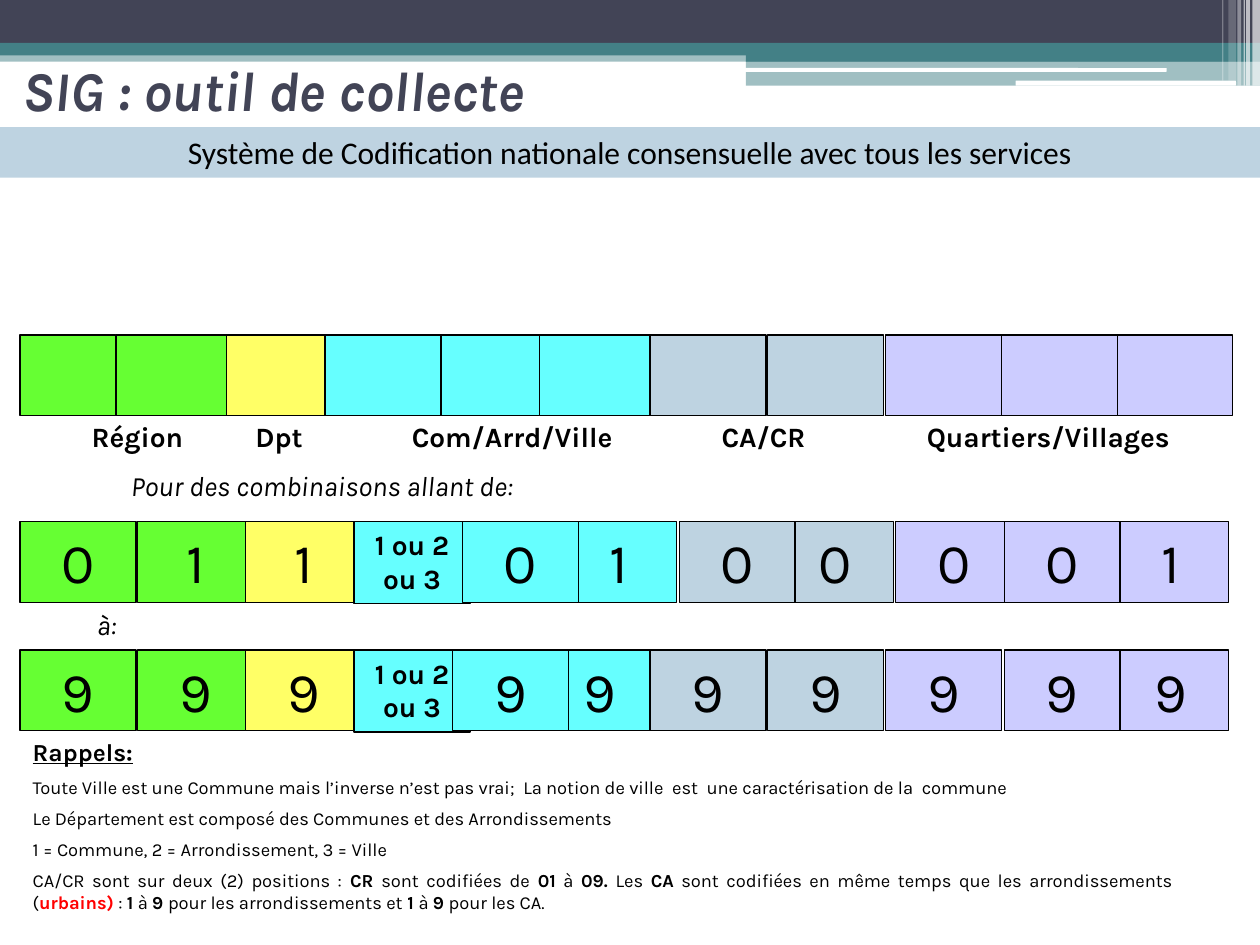
from dataclasses import dataclass

from pptx import Presentation
from pptx.dml.color import RGBColor
from pptx.enum.shapes import MSO_SHAPE as Shape
from pptx.enum.text import MSO_ANCHOR as Anchor, MSO_AUTO_SIZE as AutoSize, PP_ALIGN as Align
from pptx.oxml.xmlchemy import OxmlElement
from pptx.util import Inches, Pt


@dataclass(frozen=True)
class Theme:
    font: str = "Karla"
    banner_font: str = "Calibri"
    black: str = "000000"
    white: str = "FFFFFF"
    red: str = "FF0000"
    navy: str = "424456"
    teal: str = "438086"
    green: str = "66FF33"
    yellow: str = "FFFF66"
    cyan: str = "66FFFF"
    blue_grey: str = "BED3E1"
    lilac: str = "CCCCFF"
    title_size: float = 32
    banner_size: float = 18
    label_size: float = 16
    heading_size: float = 14
    note_size: float = 10.5


theme = Theme()


def add_text(paragraph, text, size=theme.label_size, color=theme.black, font=theme.font,
             align=Align.CENTER, bold=False, italic=False, underline=False):
    paragraph.alignment = align
    run = paragraph.add_run()
    run.text = text
    run.font.name = font
    run.font.size = Pt(size)
    run.font.color.rgb = RGBColor.from_string(color)
    run.font.bold, run.font.italic, run.font.underline = bold, italic, underline


def add_box(left, top, width, height, fill, opacity=100, outlined=False, kind=Shape.RECTANGLE):
    shape = slide.shapes.add_shape(kind, Inches(left), Inches(top), Inches(width), Inches(height))
    shape.shadow.inherit = False
    shape.fill.solid()
    shape.fill.fore_color.rgb = RGBColor.from_string(fill)
    if opacity < 100:
        alpha = OxmlElement("a:alpha")
        alpha.set("val", str(opacity * 1000))
        shape.fill._xPr.find(".//{*}srgbClr").append(alpha)
    if outlined:
        shape.line.color.rgb = RGBColor.from_string(theme.black)
        shape.line.width = Pt(0.75)
    else:
        shape.line.fill.background()
    shape.text_frame.word_wrap = True
    shape.text_frame.vertical_anchor = Anchor.TOP
    return shape


presentation = Presentation()
presentation.slide_width, presentation.slide_height = Inches(10), Inches(7.5)
slide = presentation.slides.add_slide(presentation.slide_layouts[1])

# Header bands
for left, top, width, height, fill, opacity in [
    (0, 0.4, 10, 0.09, theme.teal, 50),
    (0, 0, 10, 0.34, theme.navy, 100),
    (0, 0.34, 10, 0.1, theme.teal, 100),
    (5.92, 0.39, 4.08, 0.1, theme.teal, 100),
    (5.92, 0.48, 4.08, 0.2, theme.teal, 50),
]:
    add_box(left, top, width, height, fill, opacity)

# White rules and vertical stripes on the header
for left, top, width, height in [(5.91, 0.54, 3.35, 0.03), (8.06, 0.64, 1.75, 0.04)]:
    add_box(left, top, width, height, theme.white, kind=Shape.ROUNDED_RECTANGLE)
for left, width, height, opacity in [
    (9.94, 0.06, 0.68, 65), (9.89, 0.03, 0.68, 65), (9.87, 0.01, 0.68, 60),
    (9.82, 0.03, 0.68, 40), (9.75, 0.06, 0.64, 20), (9.7, 0.01, 0.64, 30),
]:
    add_box(left, 0, width, height, theme.white, opacity)

# Title and subtitle banner
title = slide.shapes.title
title.left, title.top, title.width, title.height = Inches(0.08), Inches(0.39), Inches(8.59), Inches(0.64)
title.text_frame.auto_size = AutoSize.NONE
title.text_frame.vertical_anchor = Anchor.TOP
add_text(title.text_frame.paragraphs[0], "SIG : outil de collecte", size=theme.title_size,
         color=theme.navy, align=Align.LEFT, bold=True, italic=True)
banner = add_box(0, 1.01, 10, 0.4, theme.blue_grey)
add_text(banner.text_frame.paragraphs[0],
         "Système de Codification nationale consensuelle avec tous les services",
         size=theme.banner_size, font=theme.banner_font)

# Code rows: neighbouring cells overlap, so the front column is drawn last
cell_width, cell_height = 0.92, 0.64
column_fills = ([theme.green] * 2 + [theme.yellow] + [theme.cyan] * 3
                + [theme.blue_grey] * 2 + [theme.lilac] * 3)
draw_order = [0, 1, 2, 3, 4, 5, 7, 6, 8, 10, 9]
kind_code = "1 ou 2 ou 3"
code_rows = [
    (2.66, 3, [0.16, 0.92, 1.8, 2.58, 3.36, 4.28, 5.16, 6.09, 7.03, 7.95, 8.86], [""] * 11),
    (4.14, 4, [0.16, 1.09, 1.95, 2.81, 3.67, 4.45, 5.39, 6.17, 7.11, 7.97, 8.83],
     ["0", "1", "1", kind_code, "0", "1", "0", "0", "0", "0", "1"]),
    (5.16, 4, [0.16, 1.09, 1.95, 2.81, 3.59, 4.3, 5.16, 6.09, 7.03, 7.97, 8.83],
     ["9", "9", "9", kind_code] + ["9"] * 7),
]
for top, front, lefts, codes in code_rows:
    for column in sorted(draw_order, key=lambda index: index == front):
        code = codes[column]
        width = min(cell_width, lefts[1] - lefts[0]) if column == 0 else cell_width
        height = 0.65 if code == kind_code else cell_height
        cell = add_box(lefts[column], top, width, height, column_fills[column], outlined=True)
        if code:
            is_kind = code == kind_code
            add_text(cell.text_frame.paragraphs[0], code, bold=is_kind,
                     size=theme.label_size if is_kind else theme.title_size)

# Column labels and range captions
for left, top, width, text, is_label in [
    (0.55, 3.28, 1.08, "Région", True),
    (1.8, 3.28, 0.83, "Dpt", True),
    (3.05, 3.28, 2.03, "Com/Arrd/Ville", True),
    (5.56, 3.28, 1, "CA/CR", True),
    (7.11, 3.28, 2.42, "Quartiers/Villages", True),
    (0.55, 3.67, 4.01, "Pour des combinaisons allant de:", False),
    (0.55, 4.77, 0.59, "à:", False),
]:
    label = slide.shapes.add_textbox(Inches(left), Inches(top), Inches(width), Inches(0.37))
    label.text_frame.word_wrap = True
    add_text(label.text_frame.paragraphs[0], text, bold=is_label, italic=not is_label)

# Reminders: text between asterisks is bold
reminders = [
    "*Rappels:*",
    "Toute Ville est une Commune mais l’inverse n’est pas vrai;  La notion de ville  est  une "
    "caractérisation de la  commune",
    "Le Département est composé des Communes et des Arrondissements",
    "1 = Commune, 2 = Arrondissement, 3 = Ville",
    "CA/CR sont sur deux (2) positions : *CR *sont codifiées de *01* à *09. *Les *CA* sont codifiées "
    "en même temps que les arrondissements (*urbains)* : *1* à *9 *pour les arrondissements et"
    "* 1 *à *9 *pour les CA.",
]
body = slide.placeholders[1]
body.left, body.top, body.width, body.height = Inches(0.16), Inches(5.8), Inches(9.25), Inches(1.57)
frame = body.text_frame
frame.auto_size = AutoSize.NONE
for number, reminder in enumerate(reminders):
    is_heading = number == 0
    paragraph = frame.paragraphs[0] if is_heading else frame.add_paragraph()
    paragraph.space_before = Pt(0 if is_heading else theme.note_size / 2)
    properties = paragraph._p.get_or_add_pPr()
    properties.set("marL", "0")
    properties.set("indent", "0")
    properties.append(OxmlElement("a:buNone"))
    for part, text in enumerate(reminder.split("*")):
        if text:
            add_text(paragraph, text, size=theme.heading_size if is_heading else theme.note_size,
                     color=theme.red if text == "urbains)" else theme.black,
                     align=Align.JUSTIFY, bold=part % 2 == 1, underline=is_heading)

presentation.save("out.pptx")
